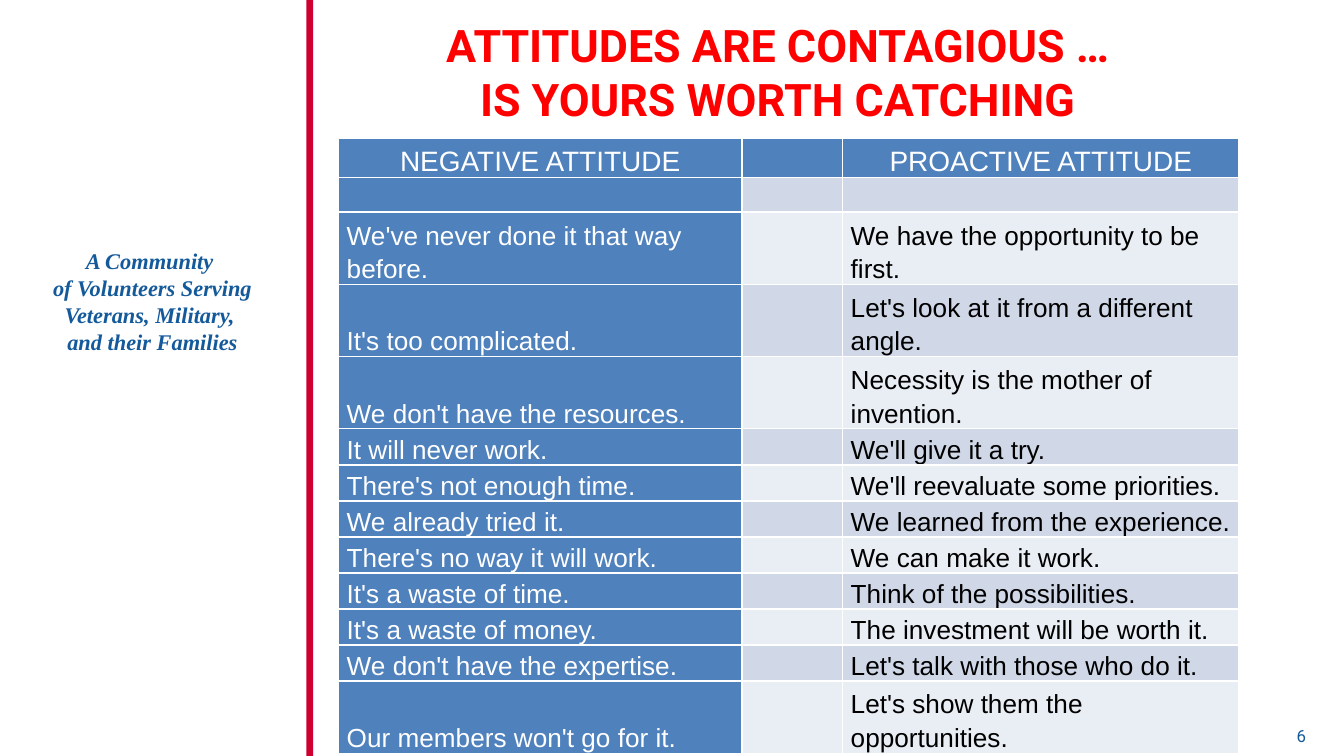
from lxml.etree import SubElement
from pptx import Presentation
from pptx.dml.color import RGBColor
from pptx.enum.shapes import MSO_SHAPE
from pptx.enum.text import MSO_ANCHOR, MSO_AUTO_SIZE, PP_ALIGN
from pptx.oxml.ns import qn
from pptx.util import Inches, Pt

WHITE = RGBColor(0xFF, 0xFF, 0xFF)
BLACK = RGBColor(0, 0, 0)
RED = RGBColor(0xFF, 0, 0)
CRIMSON = RGBColor(0xCF, 0x00, 0x31)
NAVY = RGBColor(0x14, 0x5A, 0x9B)
BLUE = RGBColor(0x4F, 0x81, 0xBD)
BANDS = [RGBColor(0xE9, 0xED, 0xF4), RGBColor(0xD0, 0xD8, 0xE8)]

# Content
TITLE = "ATTITUDES ARE CONTAGIOUS …\vIS YOURS WORTH CATCHING"
MOTTO = "A Community \vof Volunteers Serving Veterans, Military, \vand their Families"
PAGE = "6"
ATTITUDES = [
    ("NEGATIVE ATTITUDE", "PROACTIVE ATTITUDE"),
    ("", ""),
    ("We've never done it that way before.", "We have the opportunity to be first."),
    ("It's too complicated.", "Let's look at it from a different angle."),
    ("We don't have the resources.", "Necessity is the mother of invention."),
    ("It will never work.", "We'll give it a try."),
    ("There's not enough time.", "We'll reevaluate some priorities."),
    ("We already tried it.", "We learned from the experience."),
    ("There's no way it will work.", "We can make it work."),
    ("It's a waste of time.", "Think of the possibilities."),
    ("It's a waste of money.", "The investment will be worth it."),
    ("We don't have the expertise.", "Let's talk with those who do it."),
    ("Our members won't go for it.", "Let's show them the opportunities."),
]
COL_WIDTHS = [3, 0.75, 2.95]
HEADER_HEIGHT, ROW_HEIGHT = 0.29, 0.26


def style(p, font, size, color, bold=False, italic=False, align=None):
    p.alignment = align
    f = p.font
    f.name, f.size, f.bold, f.italic = font, Pt(size), bold, italic
    f.color.rgb = color


def add_panel(s, left, width, height, color):
    sp = s.shapes.add_shape(MSO_SHAPE.RECTANGLE, Inches(left), 0,
                            Inches(width), height)
    sp.shadow.inherit = False
    sp.fill.solid()
    sp.fill.fore_color.rgb = color
    sp.line.fill.background()


def add_text(s, box, text, *args, **kwargs):
    tf = s.shapes.add_textbox(*map(Inches, box)).text_frame
    tf.word_wrap = True
    p = tf.paragraphs[0]
    p.text = text
    style(p, *args, **kwargs)


def set_borders(cell):
    tc_pr = cell._tc.get_or_add_tcPr()
    for i, side in enumerate("LRTB"):
        ln = tc_pr.makeelement(qn(f"a:ln{side}"), {"w": str(Pt(1))})
        fill = SubElement(ln, qn("a:solidFill"))
        SubElement(fill, qn("a:srgbClr"), val=str(WHITE))
        tc_pr.insert(i, ln)


def fill_cell(cell, text, row, col):
    header = row == 0
    size = 15 if header else 14
    blue = header or col == 0
    cell.fill.solid()
    cell.fill.fore_color.rgb = BLUE if blue else BANDS[row % 2]
    cell.margin_left = cell.margin_right = Inches(0.06)
    cell.margin_top = cell.margin_bottom = 0
    cell.vertical_anchor = MSO_ANCHOR.BOTTOM
    p = cell.text_frame.paragraphs[0]
    p.line_spacing = 1.15
    if text:
        p.text = text
    else:  # keeps the empty cell as low as its row
        p._p.get_or_add_endParaRPr().set("sz", str(size * 100))
    style(p, "Arial", size, WHITE if blue else BLACK,
          align=PP_ALIGN.CENTER if header else PP_ALIGN.LEFT)
    set_borders(cell)


# Widescreen slide, 16:9
prs = Presentation()
prs.slide_width = Inches(10)
prs.slide_height = prs.slide_width * 9 // 16
s = prs.slides.add_slide(prs.slide_layouts[5])

# Sidebar and page number
add_panel(s, -0.02, 2.3, Inches(5.64), WHITE)
add_panel(s, 2.28, 0.05, prs.slide_height, CRIMSON)
add_text(s, (9.55, 5.35, 0.45, 0.26), PAGE, "Roboto", 9, NAVY)
add_text(s, (0.29, 1.79, 1.69, 0.91), MOTTO, "Times New Roman", 12, NAVY,
         bold=True, italic=True, align=PP_ALIGN.CENTER)

# Attitude table
height = HEADER_HEIGHT + ROW_HEIGHT * (len(ATTITUDES) - 1)
table = s.shapes.add_table(len(ATTITUDES), len(COL_WIDTHS), Inches(2.52), Inches(1.03),
                           Inches(sum(COL_WIDTHS)), Inches(height)).table
for column, width in zip(table.columns, COL_WIDTHS):
    column.width = Inches(width)
for row, (negative, proactive) in enumerate(ATTITUDES):
    table.rows[row].height = Inches(ROW_HEIGHT if row else HEADER_HEIGHT)
    for col, text in enumerate((negative, "", proactive)):
        fill_cell(table.cell(row, col), text, row, col)

# Title
title = s.shapes.title
title.left, title.top, title.width, title.height = map(Inches, (2.99, 0.03, 5.59, 1))
tf = title.text_frame
tf.auto_size = MSO_AUTO_SIZE.NONE
tf.vertical_anchor = MSO_ANCHOR.MIDDLE
tf.paragraphs[0].text = TITLE
style(tf.paragraphs[0], "Roboto", 24, RED, bold=True, align=PP_ALIGN.CENTER)

prs.save("out.pptx")
